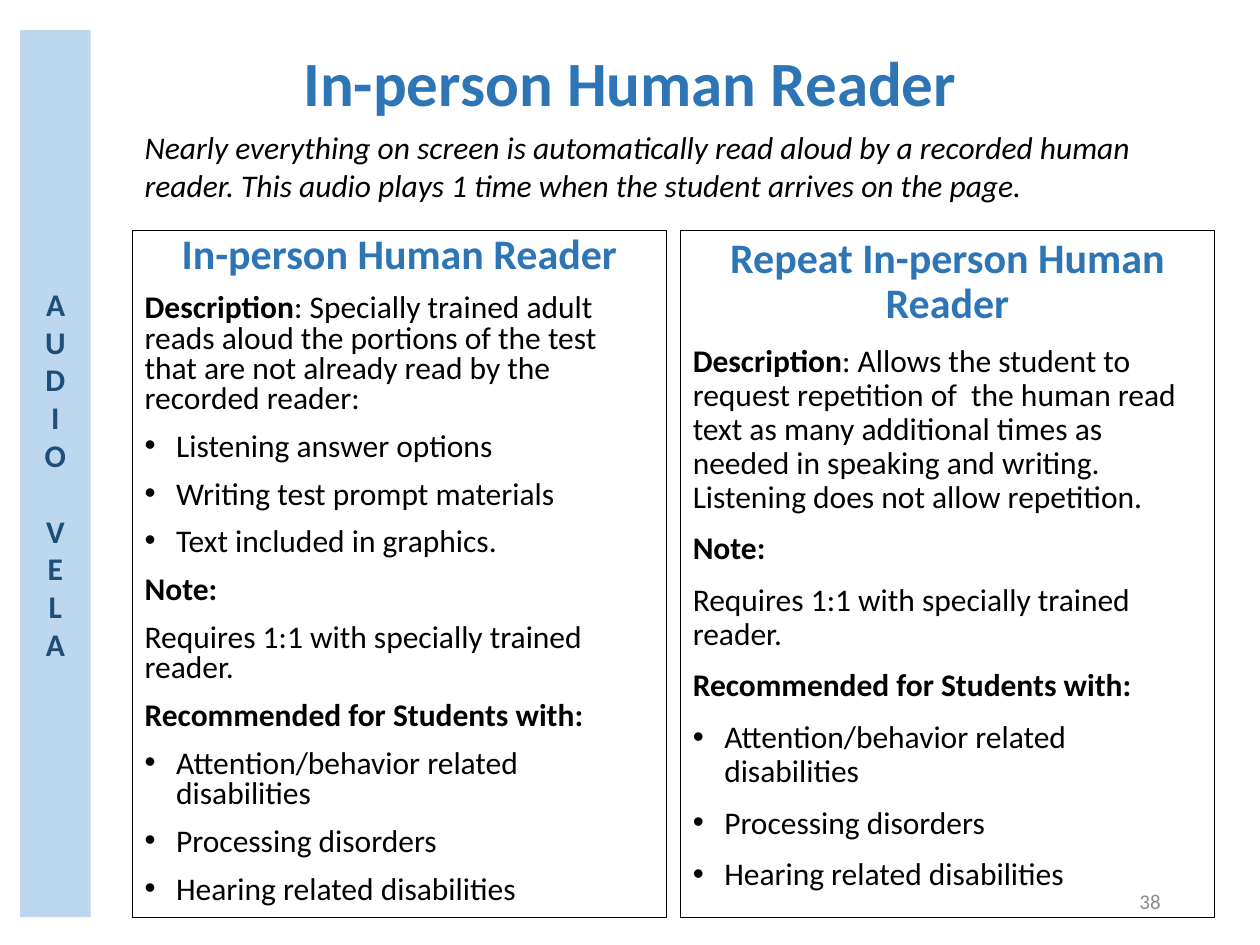
from lxml.etree import SubElement
from pptx import Presentation
from pptx.dml.color import RGBColor
from pptx.enum.shapes import MSO_SHAPE
from pptx.enum.text import MSO_ANCHOR, PP_ALIGN
from pptx.oxml.ns import qn
from pptx.util import Inches, Pt

BLACK = RGBColor(0x00, 0x00, 0x00)
BLUE = RGBColor(0x2E, 0x75, 0xB6)
NAVY = RGBColor(0x1F, 0x4E, 0x79)
PALE_BLUE = RGBColor(0xBD, 0xD7, 0xEE)
GRAY = RGBColor(0x8C, 0x8C, 0x8C)

COLUMNS, ROWS = 100, 75
PANEL_LEFT, PANEL_PITCH = 10.5, 43.5
PANEL_TOP, PANEL_WIDTH, PANEL_HEIGHT = 18.3, 42.4, 54.5

NOTE = [
    ("bold", "Note:"),
    ("plain", "Requires 1:1 with specially trained reader."),
    ("bold", "Recommended for Students with:"),
    ("bullet", "Attention/behavior related disabilities"),
    ("bullet", "Processing disorders"),
    ("bullet", "Hearing related disabilities"),
]
PANELS = [
    ("In-person Human Reader", 0.8,
     ": Specially trained adult reads aloud the portions of the test that are "
     "not already read by the recorded reader:",
     [("bullet", "Listening answer options"),
      ("bullet", "Writing test prompt materials"),
      ("bullet", "Text included in graphics.")] + NOTE),
    ("Repeat In-person Human Reader", 0.9,
     ": Allows the student to request repetition of  the human read text as many "
     "additional times as needed in speaking and writing. Listening does not "
     "allow repetition.",
     NOTE),
]


class SlideBuilder:
    """Holds the style and the current slide, placing elements on a grid."""

    font_name = "Calibri"

    def __init__(self, presentation):
        """Add a blank slide and measure its grid cells."""
        self.slide = presentation.slides.add_slide(presentation.slide_layouts[6])
        self.column = presentation.slide_width / COLUMNS
        self.row = presentation.slide_height / ROWS

    def place(self, left, top, width, height):
        """Turn grid columns and rows into slide lengths."""
        return (round(left * self.column), round(top * self.row),
                round(width * self.column), round(height * self.row))

    def style(self, paragraph, size, color, bold=None, italic=None,
              align=PP_ALIGN.LEFT, spacing=1.0):
        """Set the font and layout of a paragraph."""
        font = paragraph.font
        font.name, font.size = self.font_name, Pt(size)
        font.bold, font.italic = bold, italic
        font.color.rgb = color
        paragraph.alignment = align
        paragraph.line_spacing = spacing

    def text(self, area, wording, size, color, anchor=MSO_ANCHOR.TOP, **style):
        """Add a text box with one paragraph."""
        frame = self.slide.shapes.add_textbox(*self.place(*area)).text_frame
        frame.word_wrap = True
        frame.vertical_anchor = anchor
        frame.text = wording
        self.style(frame.paragraphs[0], size, color, **style)

    def rectangle(self, area, fill=None, line=None):
        """Add a plain rectangle and return its text frame."""
        shape = self.slide.shapes.add_shape(MSO_SHAPE.RECTANGLE, *self.place(*area))
        shape.shadow.inherit = False
        if fill is None:
            shape.fill.background()
        else:
            shape.fill.solid()
            shape.fill.fore_color.rgb = fill
        if line is None:
            shape.line.fill.background()
        else:
            shape.line.color.rgb = line
            shape.line.width = Pt(0.75)
        shape.text_frame.word_wrap = True
        return shape.text_frame

    def sidebar(self, area, wording):
        """Add a filled bar with stacked upright letters."""
        frame = self.rectangle(area, fill=PALE_BLUE)
        frame.vertical_anchor = MSO_ANCHOR.MIDDLE
        frame.text = wording
        frame._txBody.bodyPr.set("vert", "wordArtVert")
        self.style(frame.paragraphs[0], 18, NAVY, bold=True, align=PP_ALIGN.CENTER)

    def bullet(self, paragraph):
        """Give a paragraph a hanging bullet."""
        properties = paragraph._p.get_or_add_pPr()
        properties.set("marL", str(Inches(0.25)))
        properties.set("indent", str(-Inches(0.25)))
        font = SubElement(properties, qn("a:buFont"), typeface="Arial")
        character = SubElement(properties, qn("a:buChar"), char="•")
        properties.find(qn("a:defRPr")).addprevious(font)
        font.addnext(character)

    def panel(self, area, heading, spacing, description, entries):
        """Add an outlined panel with a heading, a description and entries."""
        frame = self.rectangle(area, line=BLACK)
        frame.vertical_anchor = MSO_ANCHOR.TOP
        frame.text = heading
        self.style(frame.paragraphs[0], 24, BLUE, bold=True,
                   align=PP_ALIGN.CENTER, spacing=spacing)
        for kind, wording in [("described", description)] + entries:
            paragraph = frame.add_paragraph()
            if kind == "described":
                label = paragraph.add_run()
                label.text = "Description"
                label.font.bold = True
            paragraph.add_run().text = wording
            self.style(paragraph, 18, BLACK, bold=kind == "bold", spacing=spacing)
            paragraph.space_before = Pt(10)
            if kind == "bullet":
                self.bullet(paragraph)


def main():
    """Build the slide and save it."""
    presentation = Presentation()
    presentation.slide_width, presentation.slide_height = Inches(10), Inches(7.5)
    builder = SlideBuilder(presentation)
    builder.text((10.5, 9.7, 87, 7.1),
                 "Nearly everything on screen is automatically read aloud by a recorded "
                 "human reader. This audio plays 1 time when the student arrives on the "
                 "page.", 18, BLACK, italic=True)
    builder.sidebar((1.6, 2.4, 5.6, 70.4), "AUDIO VELA")
    builder.text((6.9, 4, 86.2, 5.7), "In-person Human Reader", 36, BLUE,
                 anchor=MSO_ANCHOR.MIDDLE, bold=True, align=PP_ALIGN.CENTER,
                 spacing=0.9)
    for index, content in enumerate(PANELS):
        left = PANEL_LEFT + index * PANEL_PITCH
        builder.panel((left, PANEL_TOP, PANEL_WIDTH, PANEL_HEIGHT), *content)
    builder.text((70.6, 69.5, 22.5, 4), "38", 12, GRAY,
                 anchor=MSO_ANCHOR.MIDDLE, align=PP_ALIGN.RIGHT)
    presentation.save("out.pptx")


if __name__ == "__main__":
    main()
